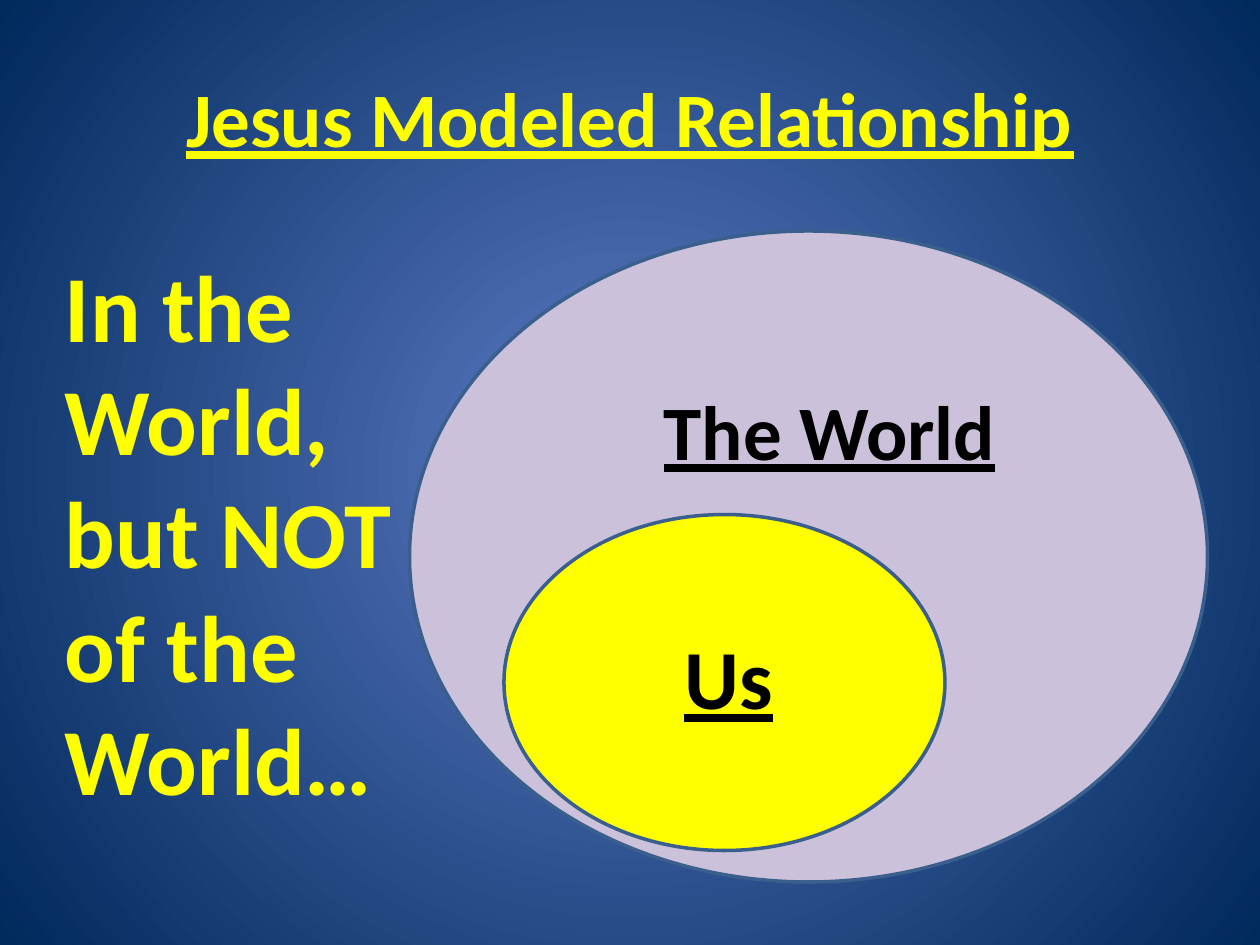
from dataclasses import dataclass

from lxml.etree import SubElement
from pptx import Presentation
from pptx.dml.color import RGBColor
from pptx.enum.shapes import MSO_SHAPE
from pptx.enum.text import MSO_ANCHOR, PP_ALIGN
from pptx.oxml.ns import qn
from pptx.slide import Slide
from pptx.util import Pt


@dataclass(frozen=True)
class Theme:
    font: str = "Calibri"
    glow: RGBColor = RGBColor(0x5E, 0x7C, 0xC5)
    navy: RGBColor = RGBColor(0x00, 0x29, 0x5C)
    yellow: RGBColor = RGBColor(0xFF, 0xFF, 0x00)
    lavender: RGBColor = RGBColor(0xCC, 0xC1, 0xDA)
    outline: RGBColor = RGBColor(0x3A, 0x5F, 0x8C)
    black: RGBColor = RGBColor(0, 0, 0)
    heading_size: float = 44
    us_size: float = 48
    message_size: float = 54
    outline_width: float = 2


@dataclass(frozen=True)
class Box:
    left: float
    top: float
    width: float
    height: float

    def in_points(self) -> tuple[Pt, Pt, Pt, Pt]:
        return Pt(self.left), Pt(self.top), Pt(self.width), Pt(self.height)


@dataclass(frozen=True)
class Circle:
    box: Box
    color: RGBColor


@dataclass(frozen=True)
class Caption:
    text: str
    box: Box
    size: float
    color: RGBColor
    underline: bool = True
    align: PP_ALIGN = PP_ALIGN.LEFT
    anchor: MSO_ANCHOR = MSO_ANCHOR.TOP


THEME = Theme()

CIRCLES = (
    Circle(Box(234, 132, 456, 372), THEME.lavender),
    Circle(Box(288, 294, 252, 192), THEME.yellow),
)

CAPTIONS = (
    Caption("Jesus Modeled Relationship", Box(36, 21.6, 648, 90),
            THEME.heading_size, THEME.yellow,
            align=PP_ALIGN.CENTER, anchor=MSO_ANCHOR.MIDDLE),
    Caption("In the World, but NOT of the World…", Box(30, 138, 204, 334),
            THEME.message_size, THEME.yellow, underline=False),
    Caption("The World", Box(342, 215.5, 264, 60.5),
            THEME.heading_size, THEME.black, align=PP_ALIGN.CENTER),
    Caption("Us", Box(384, 354, 120, 65.5), THEME.us_size, THEME.black),
)


def paint_background(slide: Slide) -> None:
    """Fill the background with a circular gradient, light in the centre."""
    fill = slide.background.fill
    fill.gradient()
    for stop, color, position in zip(
        fill.gradient_stops, (THEME.glow, THEME.navy), (0, 1)
    ):
        stop.color.rgb = color
        stop.position = position
    gradient = slide.element.find(".//" + qn("a:gradFill"))
    gradient.remove(gradient.find(qn("a:lin")))
    circle = SubElement(gradient, qn("a:path"), {"path": "circle"})
    SubElement(circle, qn("a:fillToRect"),
               {side: "50000" for side in "ltrb"})


def draw_circle(slide: Slide, circle: Circle) -> None:
    oval = slide.shapes.add_shape(MSO_SHAPE.OVAL, *circle.box.in_points())
    oval.shadow.inherit = False
    oval.fill.solid()
    oval.fill.fore_color.rgb = circle.color
    oval.line.color.rgb = THEME.outline
    oval.line.width = Pt(THEME.outline_width)


def draw_caption(slide: Slide, caption: Caption) -> None:
    frame = slide.shapes.add_textbox(*caption.box.in_points()).text_frame
    frame.word_wrap = True
    frame.vertical_anchor = caption.anchor
    paragraph = frame.paragraphs[0]
    paragraph.text = caption.text
    paragraph.alignment = caption.align
    font = paragraph.font
    font.name = THEME.font
    font.size = Pt(caption.size)
    font.bold = True
    font.underline = caption.underline
    font.color.rgb = caption.color


def main() -> None:
    presentation = Presentation()
    presentation.slide_width, presentation.slide_height = Pt(720), Pt(540)
    slide = presentation.slides.add_slide(presentation.slide_layouts[6])
    paint_background(slide)
    for circle in CIRCLES:
        draw_circle(slide, circle)
    for caption in CAPTIONS:
        draw_caption(slide, caption)
    presentation.save("out.pptx")


if __name__ == "__main__":
    main()
